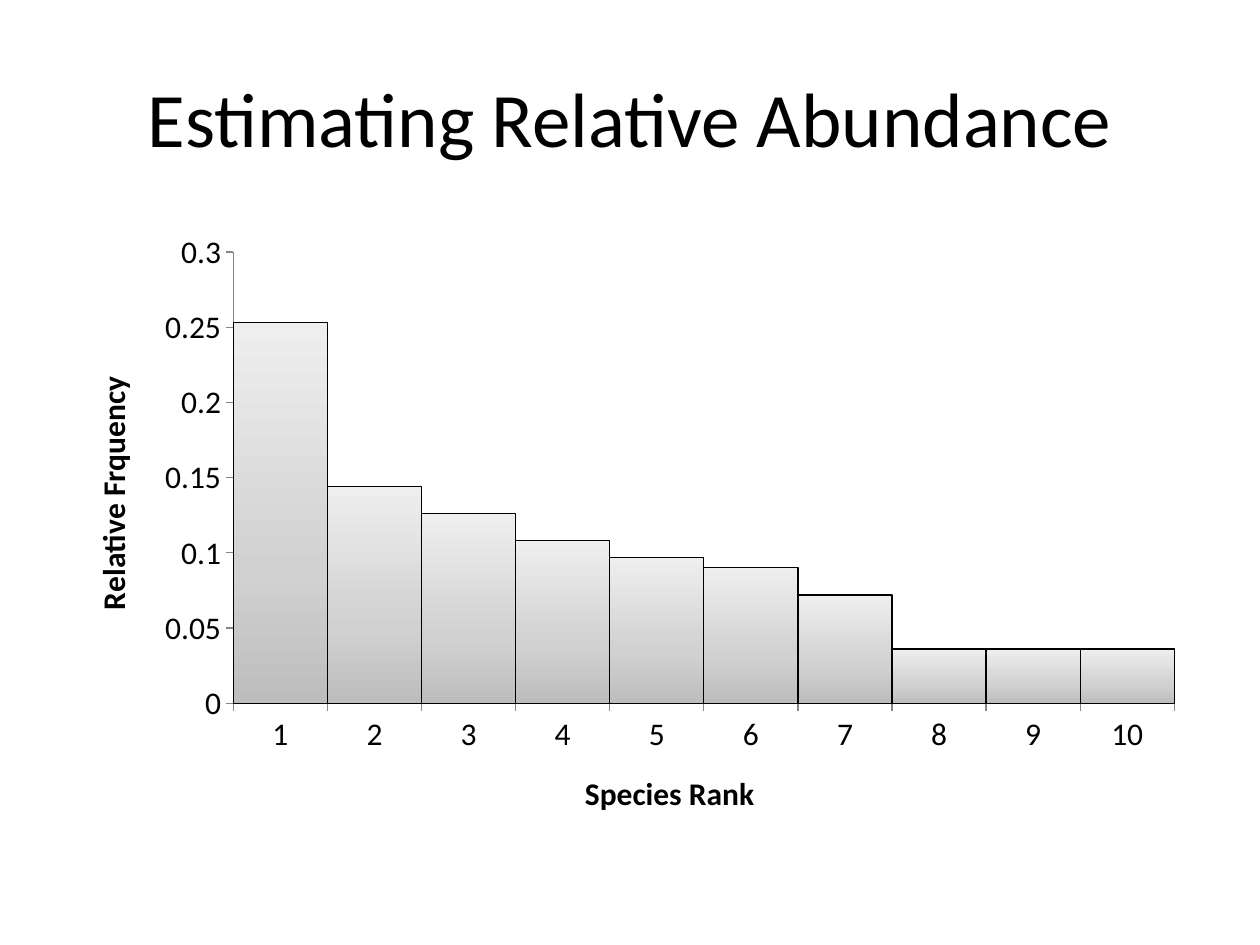
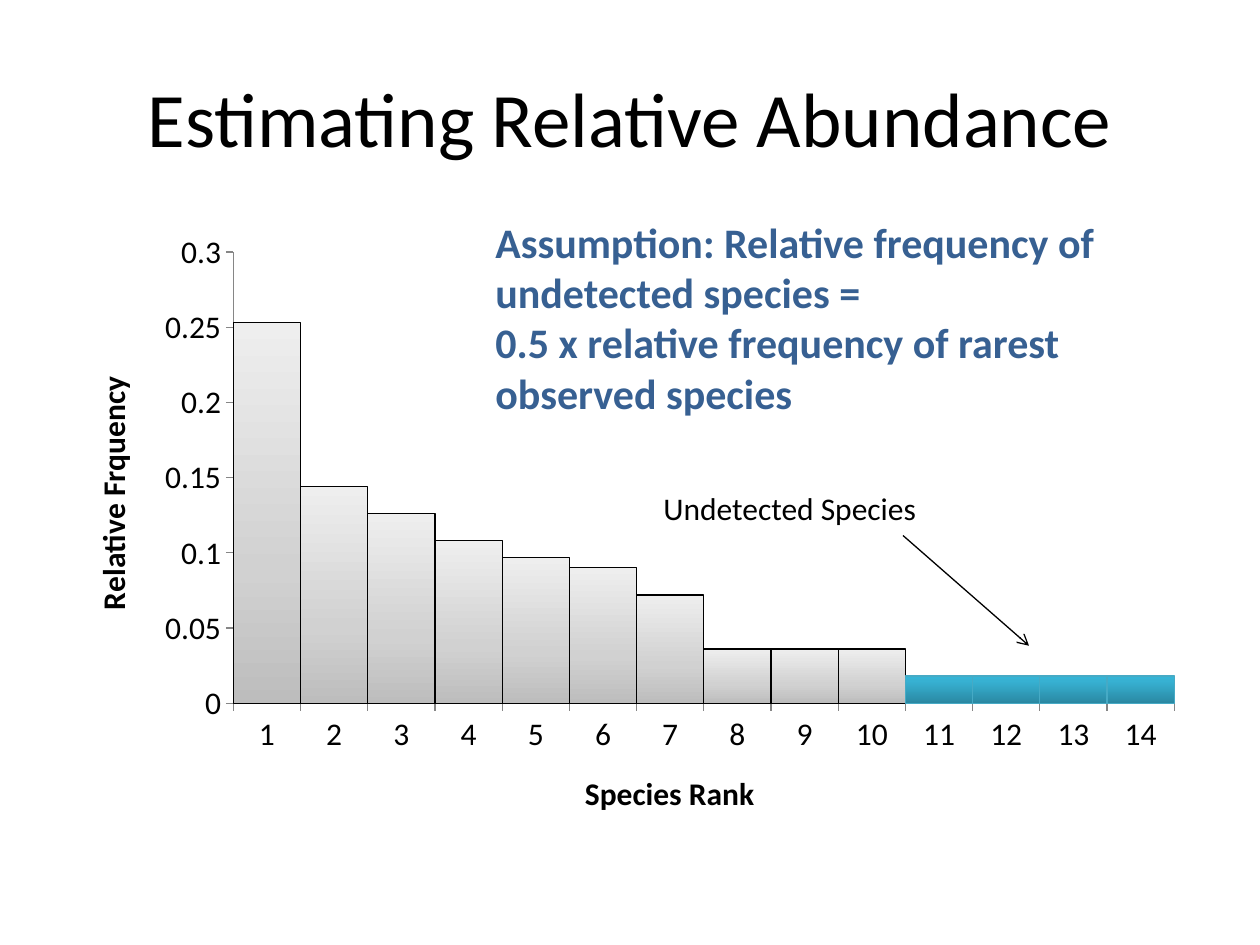
from copy import deepcopy
from dataclasses import dataclass

from lxml import etree
from pptx import Presentation
from pptx.chart.data import CategoryChartData
from pptx.dml.color import RGBColor
from pptx.enum.chart import XL_CHART_TYPE, XL_TICK_MARK
from pptx.enum.shapes import MSO_CONNECTOR
from pptx.enum.text import MSO_ANCHOR, MSO_AUTO_SIZE, PP_ALIGN
from pptx.oxml.ns import qn
from pptx.util import Inches, Pt

COLUMN_CLUSTERED = XL_CHART_TYPE.COLUMN_CLUSTERED
TICK_OUTSIDE = XL_TICK_MARK.OUTSIDE
STRAIGHT = MSO_CONNECTOR.STRAIGHT
MIDDLE = MSO_ANCHOR.MIDDLE
CENTER = PP_ALIGN.CENTER
GROW = MSO_AUTO_SIZE.SHAPE_TO_FIT_TEXT

SLIDE_WIDTH, SLIDE_HEIGHT = Inches(10), Inches(7.5)
COLUMNS, ROWS = 120, 90
TITLE_ONLY = 5


@dataclass(frozen=True)
class Theme:
    font: str = "Calibri"
    ink: str = "000000"
    accent: str = "376092"
    axis: str = "868686"
    undetected_edge: str = "46AAC5"
    observed_stops: tuple = ((0, "BDBDBD"), (0.35, "D1D1D1"), (1, "EEEEEE"))
    undetected_stops: tuple = ((0, "2A88A2"), (0.8, "37B1D2"), (1, "34B4D6"))
    title_size: int = 44
    note_size: int = 24
    label_size: int = 18
    line_width: float = 0.75


@dataclass(frozen=True)
class Box:
    left: float
    top: float
    width: float
    height: float

    def inner(self, left, top, width, height):
        return Box(self.left + left, self.top + top, width, height)

    def lengths(self):
        return (across(self.left), down(self.top), across(self.width), down(self.height))


THEME = Theme()
TITLE_BOX = Box(6, 3.6, 108, 15)
CHART_BOX = Box(6, 21, 108, 59.4)

TITLE = "Estimating Relative Abundance"
OBSERVED = (0.253, 0.144, 0.126, 0.108, 0.097, 0.09, 0.072, 0.036, 0.036, 0.036)
UNDETECTED = (OBSERVED[-1] / 2,) * 4
ASSUMPTION = (
    "Assumption: Relative frequency of undetected species =",
    "0.5 x relative frequency of rarest observed species",
)


def across(columns):
    return round(SLIDE_WIDTH * columns / COLUMNS)


def down(rows):
    return round(SLIDE_HEIGHT * rows / ROWS)


def style_font(font, size, color=THEME.ink, bold=False):
    font.name = THEME.font
    font.size = Pt(size)
    font.bold = bold
    font.color.rgb = RGBColor.from_string(color)


def style_line(line, color):
    line.color.rgb = RGBColor.from_string(color)
    line.width = Pt(THEME.line_width)


def fill_upward(fill, stops):
    fill.gradient()
    fill.gradient_angle = 90
    first = fill.gradient_stops[0]._gs
    first.addnext(deepcopy(first))
    for stop, (position, color) in zip(fill.gradient_stops, stops):
        stop.position = position
        stop.color.rgb = RGBColor.from_string(color)


def add_title(slide, box, text):
    title = slide.shapes.title
    title.left, title.top, title.width, title.height = box.lengths()
    title.text_frame.vertical_anchor = MIDDLE
    paragraph = title.text_frame.paragraphs[0]
    paragraph.alignment = CENTER
    run = paragraph.add_run()
    run.text = text
    style_font(run.font, THEME.title_size)


def add_text(slide, box, lines, size, color=THEME.ink, bold=False):
    frame = slide.shapes.add_textbox(*box.lengths()).text_frame
    frame.word_wrap = True
    frame.auto_size = GROW
    for index, line in enumerate(lines):
        paragraph = frame.add_paragraph() if index else frame.paragraphs[0]
        run = paragraph.add_run()
        run.text = line
        style_font(run.font, size, color, bold)


def add_arrow(slide, box):
    left, top, width, height = box.lengths()
    arrow = slide.shapes.add_connector(STRAIGHT, left, top, left + width, top + height)
    style_line(arrow.line, THEME.ink)
    etree.SubElement(arrow.line._get_or_add_ln(), qn("a:tailEnd"), type="arrow")
    etree.SubElement(arrow._element.spPr, qn("a:effectLst"))


def style_axis(axis, title):
    axis.has_major_gridlines = False
    axis.major_tick_mark = TICK_OUTSIDE
    style_line(axis.format.line, THEME.axis)
    style_font(axis.tick_labels.font, THEME.label_size)
    run = axis.axis_title.text_frame.paragraphs[0].add_run()
    run.text = title
    style_font(run.font, THEME.label_size, bold=True)


def add_abundance_chart(slide, box, observed, undetected=()):
    frequencies = observed + undetected
    data = CategoryChartData()
    data.categories = [str(rank + 1) for rank in range(len(frequencies))]
    data.add_series("Series 1", frequencies)
    chart = slide.shapes.add_chart(COLUMN_CLUSTERED, *box.lengths(), data).chart
    chart.has_legend = False
    chart.has_title = False
    style_font(chart.font, THEME.label_size)
    style_axis(chart.category_axis, "Species Rank")
    style_axis(chart.value_axis, "Relative Frquency")
    chart.value_axis.minimum_scale = 0
    chart.value_axis.maximum_scale = 0.3
    chart.value_axis.major_unit = 0.05

    plot = chart.plots[0]
    plot.vary_by_categories = False
    plot.gap_width = 0
    plot.overlap = -53
    series = plot.series[0]
    fill_upward(series.format.fill, THEME.observed_stops)
    style_line(series.format.line, THEME.ink)
    for index in range(len(observed), len(frequencies)):
        column = series.points[index].format
        fill_upward(column.fill, THEME.undetected_stops)
        style_line(column.line, THEME.undetected_edge)


def add_undetected_notes(slide, box):
    add_text(slide, box.inner(56, 25, 27, 4.8), ["Undetected Species"], THEME.label_size)
    add_arrow(slide, box.inner(80, 30, 12, 10.5))
    add_text(slide, box.inner(40, -1, 63, 20.6), ASSUMPTION,
             THEME.note_size, THEME.accent, bold=True)


def add_abundance_slide(presentation, undetected=()):
    slide = presentation.slides.add_slide(presentation.slide_layouts[TITLE_ONLY])
    add_title(slide, TITLE_BOX, TITLE)
    add_abundance_chart(slide, CHART_BOX, OBSERVED, undetected)
    if undetected:
        add_undetected_notes(slide, CHART_BOX)


def main():
    presentation = Presentation()
    presentation.slide_width = SLIDE_WIDTH
    presentation.slide_height = SLIDE_HEIGHT
    add_abundance_slide(presentation)
    add_abundance_slide(presentation, UNDETECTED)
    presentation.save("out.pptx")


if __name__ == "__main__":
    main()
